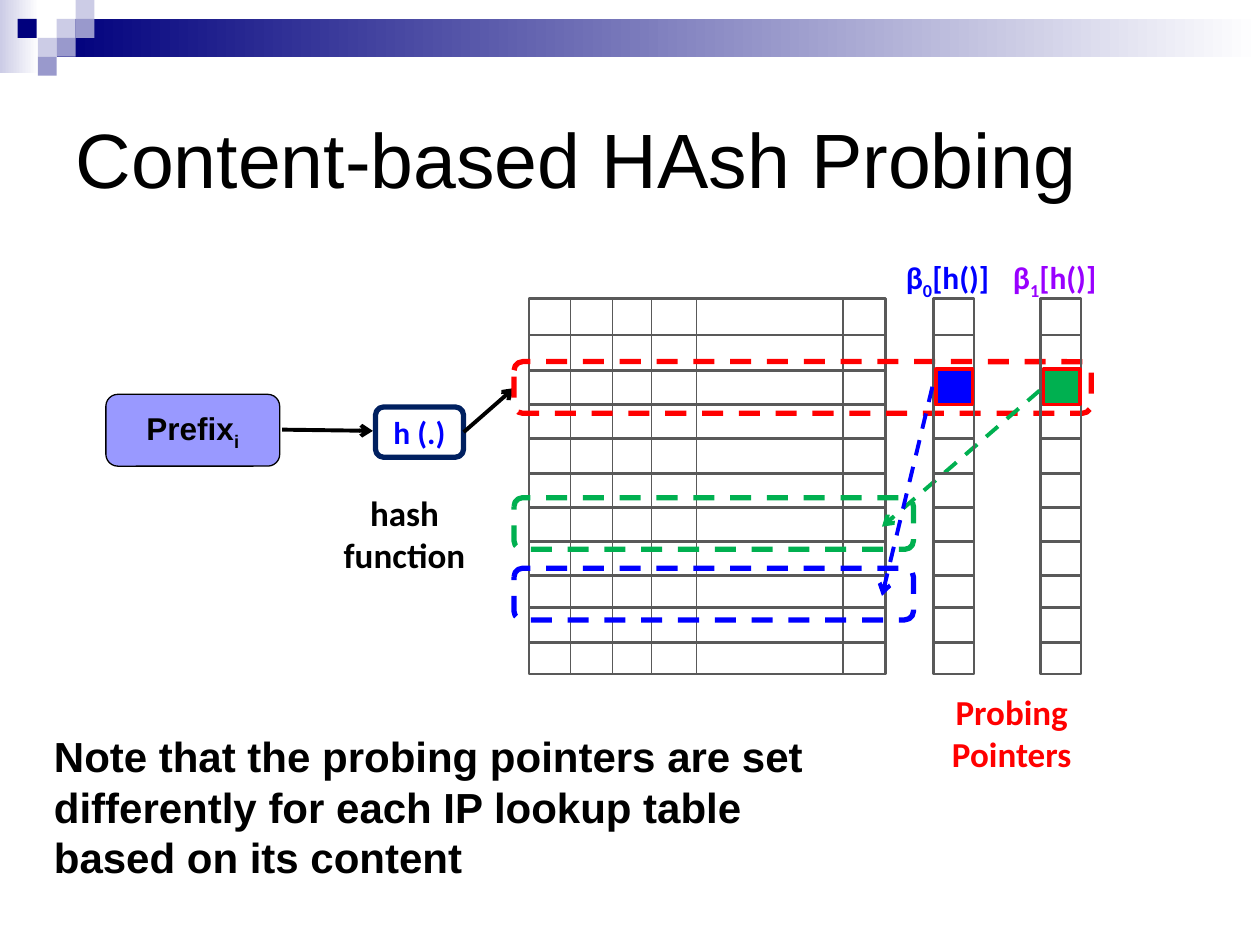
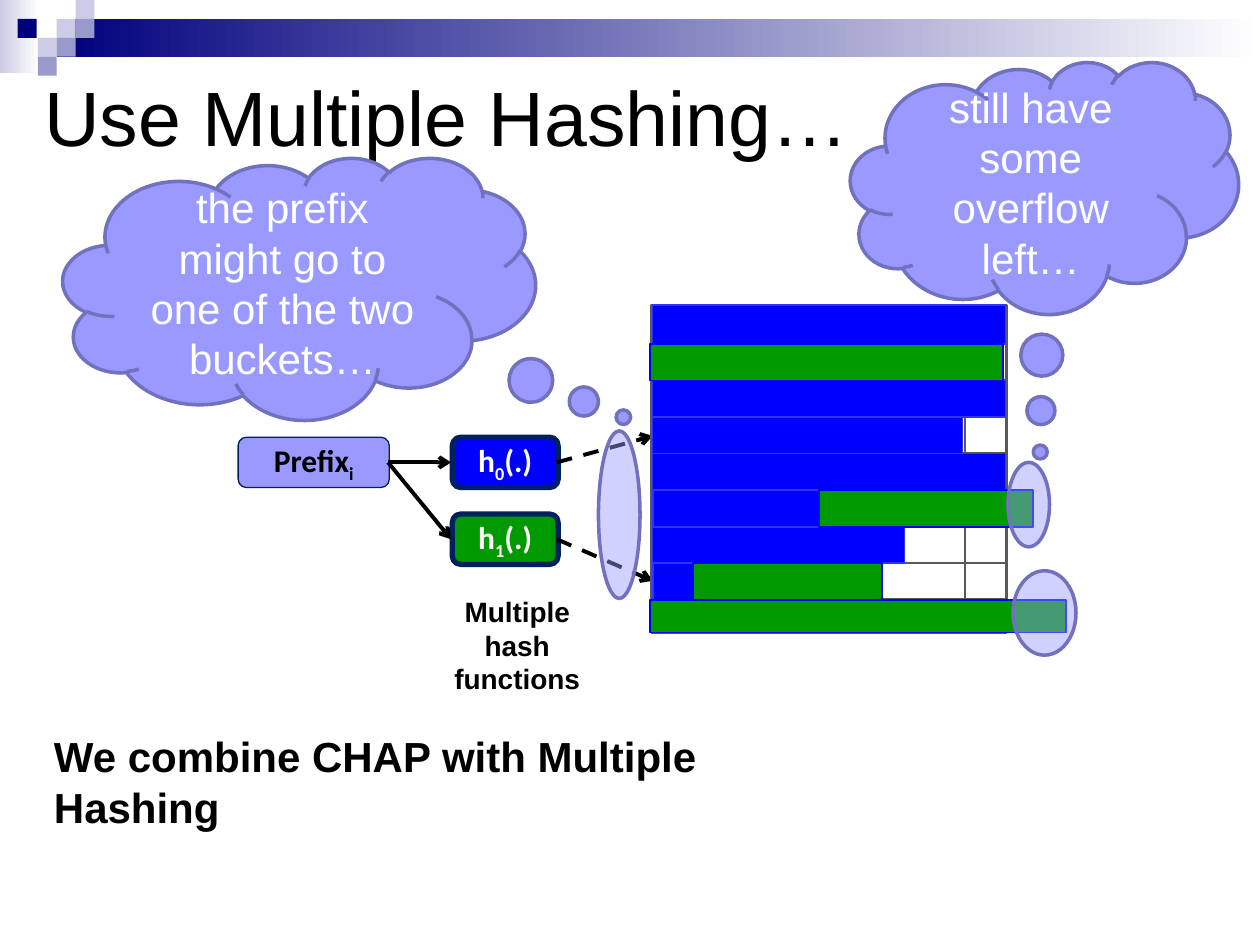
from dataclasses import dataclass
from typing import Any

from lxml import etree
from pptx import Presentation
from pptx.dml.color import RGBColor
from pptx.enum import dml, shapes, text
from pptx.oxml import ns
from pptx.util import Inches, Pt

BLACK, WHITE, RED, BLUE = "000000", "FFFFFF", "FF0000", "0000FF"
NAVY, PALE, MID = "00007D", "CCCCE6", "9999CC"
LILAC, LILAC_EDGE, BOX_EDGE, GRID = "9999FF", "7171BD", "002060", "595959"
LEAF, GREEN, PURPLE, BAR_EDGE = "00B050", "009900", "9900FF", "3333FF"
RECT = shapes.MSO_SHAPE.RECTANGLE
ROUND = shapes.MSO_SHAPE.ROUNDED_RECTANGLE
OVAL = shapes.MSO_SHAPE.OVAL
CLOUD = shapes.MSO_SHAPE.CLOUD_CALLOUT
CENTER = text.PP_ALIGN.CENTER
MIDDLE, TOP = text.MSO_ANCHOR.MIDDLE, text.MSO_ANCHOR.TOP
FIELD_EDGES = (0.33, 0.66, 0.97, 1.33, 2.49)


def color(value):
    return RGBColor.from_string(value)


def write(shape, content, size=18, font="Calibri", ink=BLACK, bold=True,
          align=CENTER, anchor=MIDDLE, inset=0.0, after=0):
    """Fill a shape with text; parts between bars are subscripts."""
    frame = shape.text_frame
    frame.word_wrap = True
    frame.auto_size = text.MSO_AUTO_SIZE.NONE
    frame.vertical_anchor = anchor
    frame.margin_left = frame.margin_right = Inches(inset)
    frame.margin_top = frame.margin_bottom = Inches(0.05)
    paragraph = frame.paragraphs[0]
    paragraph.alignment = align
    paragraph.space_after = Pt(after)
    for index, part in enumerate(content.split("|")):
        run = paragraph.add_run()
        run.text = part
        run.font.size, run.font.name, run.font.bold = Pt(size), font, bold
        run.font.color.rgb = color(ink)
        if index % 2:
            run.font._element.set("baseline", "-25000")


def stroke(line, ink, weight, dashed):
    line.color.rgb = color(ink)
    line.width = Pt(weight)
    if dashed:
        line.dash_style = dml.MSO_LINE.DASH


@dataclass
class Region:
    """A part of a slide whose contents are placed from its top left corner."""
    slide: Any
    left: float
    top: float

    def shape(self, kind, x, y, width, height, fill=None, edge=None,
              weight=1.0, dashed=False, opacity=None):
        shape = self.slide.shapes.add_shape(
            kind, Inches(self.left + x), Inches(self.top + y),
            Inches(width), Inches(height))
        shape.shadow.inherit = False
        if fill:
            shape.fill.solid()
            shape.fill.fore_color.rgb = color(fill)
        else:
            shape.fill.background()
        if opacity:
            fill_color = shape.element.spPr.find(ns.qn("a:solidFill"))[0]
            etree.SubElement(fill_color, ns.qn("a:alpha"),
                             val=str(opacity * 1000))
        if edge:
            stroke(shape.line, edge, weight, dashed)
        else:
            shape.line.fill.background()
        return shape

    def line(self, start, end, ink=BLACK, weight=2.25, dashed=False, arrow=True):
        (x1, y1), (x2, y2) = start, end
        connector = self.slide.shapes.add_connector(
            shapes.MSO_CONNECTOR.STRAIGHT,
            Inches(self.left + x1), Inches(self.top + y1),
            Inches(self.left + x2), Inches(self.top + y2))
        stroke(connector.line, ink, weight, dashed)
        if arrow:
            etree.SubElement(connector.line._get_or_add_ln(),
                             ns.qn("a:tailEnd"), type="arrow")
        etree.SubElement(connector.element.spPr, ns.qn("a:effectLst"))

    def label(self, content, x, y, width, height, **style):
        box = self.slide.shapes.add_textbox(
            Inches(self.left + x), Inches(self.top + y),
            Inches(width), Inches(height))
        write(box, content, **style)

    def grid(self, x, width, height, rows, columns=(), column_weight=1.5):
        self.shape(RECT, x, 0, width, height, edge=GRID, weight=1.5)
        for y in rows:
            self.line((x, y), (x + width, y), GRID, 1.5, arrow=False)
        for edge in columns:
            self.line((x + edge, 0), (x + edge, height), GRID, column_weight,
                      arrow=False)


# Shared parts
def decorate_layout(layout, slide):
    """Build the band and the corner squares, then move them to the layout."""
    corner = Region(slide, 0, 0)
    parts = []
    for x, y, width, height, start in ((0, 0, 0.31, 0.58, PALE),
                                       (0.45, 0.15, 9.55, 0.3, NAVY)):
        band = corner.shape(RECT, x, y, width, height)
        band.fill.gradient()
        band.fill.gradient_angle = 0
        for stop, ink in zip(band.fill.gradient_stops, (start, WHITE)):
            stop.color.rgb = color(ink)
        parts.append(band)
    for x, y, ink in ((0.45, 0.15, PALE), (0.6, 0, PALE), (0.6, 0.15, MID),
                      (0.3, 0.3, PALE), (0.14, 0.15, NAVY),
                      (0.45, 0.3, MID), (0.3, 0.45, MID)):
        parts.append(corner.shape(RECT, x, y, 0.15, 0.15, ink))
    for position, part in enumerate(parts, start=2):
        layout.shapes.element.insert(position, part.element)


def set_title(slide, content, left, top, width, height):
    title = slide.shapes.title
    title.left, title.top = Inches(left), Inches(top)
    title.width, title.height = Inches(width), Inches(height)
    write(title, content, size=44, font="Arial", bold=False,
          align=text.PP_ALIGN.LEFT, inset=0.1)


def add_note(region, content, height):
    region.label(content, 0, 0, 6.67, height, size=24, font="Arial",
                 align=text.PP_ALIGN.LEFT, anchor=TOP, inset=0.1)


# Slide 1 regions
def add_single_hash(region):
    caption = region.shape(RECT, 1.58, 0.98, 1.58, 0.7, WHITE)
    write(caption, "hash function", size=20, anchor=TOP, inset=0.1, after=10)
    prefix = region.shape(ROUND, 0, 0.26, 1.38, 0.57, LILAC, BLACK, 0.75)
    write(prefix, "Prefix|i|", font="Arial")
    hash_box = region.shape(ROUND, 2.14, 0.36, 0.7, 0.4, edge=BOX_EDGE, weight=3)
    write(hash_box, "h (.)", ink=BLUE, after=10)
    region.line((1.4, 0.54), (2.12, 0.55))
    region.line((2.84, 0.56), (3.24, 0.21))


def add_probing_table(region):
    rows = (0.29, 0.57, 0.84, 1.11, 1.39, 1.66, 1.93, 2.2, 2.45, 2.73)
    height = 2.98
    region.grid(0, 2.83, height, rows, FIELD_EDGES, 0.75)
    region.label("Probing Pointers", 3.11, 3.07, 1.44, 0.74, size=20, ink=RED,
                 after=10)
    region.shape(ROUND, -0.12, 0.5, 4.58, 0.41, edge=RED, weight=3, dashed=True)
    # Pointer columns, each with the bucket it leads to
    pointers = (
        ("β|1|[h()]", 4.06, PURPLE, LEAF, 1.58, (4.05, 0.73), (2.8, 1.81)),
        ("β|0|[h()]", 3.21, BLUE, BLUE, 2.14, (3.2, 0.7), (2.8, 2.36)))
    for name, x, ink, fill, bucket, start, end in pointers:
        region.grid(x, 0.32, height, rows)
        region.label(name, x - 0.35, -0.37, 0.92, 0.4, ink=ink, anchor=TOP)
        region.shape(ROUND, -0.12, bucket, 3.17, 0.41, edge=fill, weight=3,
                     dashed=True)
        region.line(start, end, fill, dashed=True)
        region.shape(RECT, x + 0.02, 0.56, 0.29, 0.28, fill, RED, 2)


# Slide 2 regions
def add_multiple_hash(region):
    caption = region.shape(RECT, 1.44, 1.25, 1.55, 0.83, WHITE)
    write(caption, "Multiple hash functions", size=16, font="Arial",
          anchor=TOP, inset=0.1, after=10)
    prefix = region.shape(ROUND, 0, 0.05, 1.2, 0.4, LILAC, BOX_EDGE, 0.75)
    write(prefix, "Prefix|i|", after=10)
    for index, (fill, target) in enumerate(((BLUE, 0.04), (GREEN, 1.19))):
        middle = 0.25 + 0.61 * index
        hash_box = region.shape(ROUND, 1.7, middle - 0.2, 0.84, 0.4, fill,
                                BOX_EDGE, 3)
        write(hash_box, f"h|{index}|(.)", ink=WHITE, after=10)
        region.line((1.19, 0.25), (1.69, middle))
        region.line((2.53, middle), (3.29, target), dashed=True)


def add_bucket_table(region):
    height = 2.6
    rows = [0.31 + 0.29 * index for index in range(8)]
    region.grid(0, 2.82, height, rows, FIELD_EDGES)
    edges = [0, *rows, height]
    blue_bars = ((0, 0.01, 2.8), (2, 0.01, 2.8), (3, 0.01, 2.46),
                 (4, 0.01, 2.8), (5, 0.01, 1.32), (6, 0.01, 2),
                 (7, 0.01, 0.32))
    green_bars = ((1, -0.01, 2.8), (5, 1.33, 1.7), (7, 0.33, 1.5),
                  (8, -0.01, 3.3))
    for bars, fill, edge in ((blue_bars, BLUE, BAR_EDGE),
                             (green_bars, GREEN, BLUE)):
        for row, x, width in bars:
            region.shape(RECT, x, edges[row], width,
                         edges[row + 1] - edges[row], fill, edge, 1)


def add_thought(region, content, width, height, tail, spots):
    for spot in spots:
        region.shape(OVAL, *spot, LILAC, LILAC_EDGE, 2, opacity=45)
    cloud = region.shape(CLOUD, 0, 0, width, height, LILAC, LILAC_EDGE, 2)
    for index, offset in enumerate(tail):
        cloud.adjustments[index] = offset
    write(cloud, content, size=24, font="Arial", ink=WHITE, bold=False, inset=0.1)


def build_probing_slide(slide):
    set_title(slide, "Content-based HAsh Probing", 0.5, 0.5, 9, 1.5)
    add_single_hash(Region(slide, 0.84, 2.87))
    add_probing_table(Region(slide, 4.2, 2.37))
    add_note(Region(slide, 0.33, 5.75),
             "Note that the probing pointers are set differently for each "
             "IP lookup table based on its content", 1.31)


def build_multiple_hashing_slide(slide):
    set_title(slide, "Use Multiple Hashing…", 0.25, 0.5, 9.5, 0.83)
    add_multiple_hash(Region(slide, 1.89, 3.42))
    add_bucket_table(Region(slide, 5.17, 2.42))
    add_thought(Region(slide, 6.75, 0.49), "still have some overflow left…",
                3.08, 2, (-0.011, 1.049),
                ((1.25, 3.18, 0.33, 0.67), (1.29, 4.04, 0.5, 0.67)))
    add_thought(Region(slide, 0.5, 1.25),
                "the prefix might go to one of the two buckets…",
                3.75, 2.08, (0.686, 0.491), ((4.25, 2.17, 0.33, 1.33),))
    add_note(Region(slide, 0.33, 5.75),
             "We combine CHAP with Multiple Hashing", 0.91)


def main():
    presentation = Presentation()
    presentation.slide_width, presentation.slide_height = Inches(10), Inches(7.5)
    title_only = presentation.slide_layouts[5]
    builders = (build_probing_slide, build_multiple_hashing_slide)
    slides = [presentation.slides.add_slide(title_only) for _ in builders]
    decorate_layout(title_only, slides[0])
    for build, slide in zip(builders, slides):
        build(slide)
    presentation.save("out.pptx")


if __name__ == "__main__":
    main()
